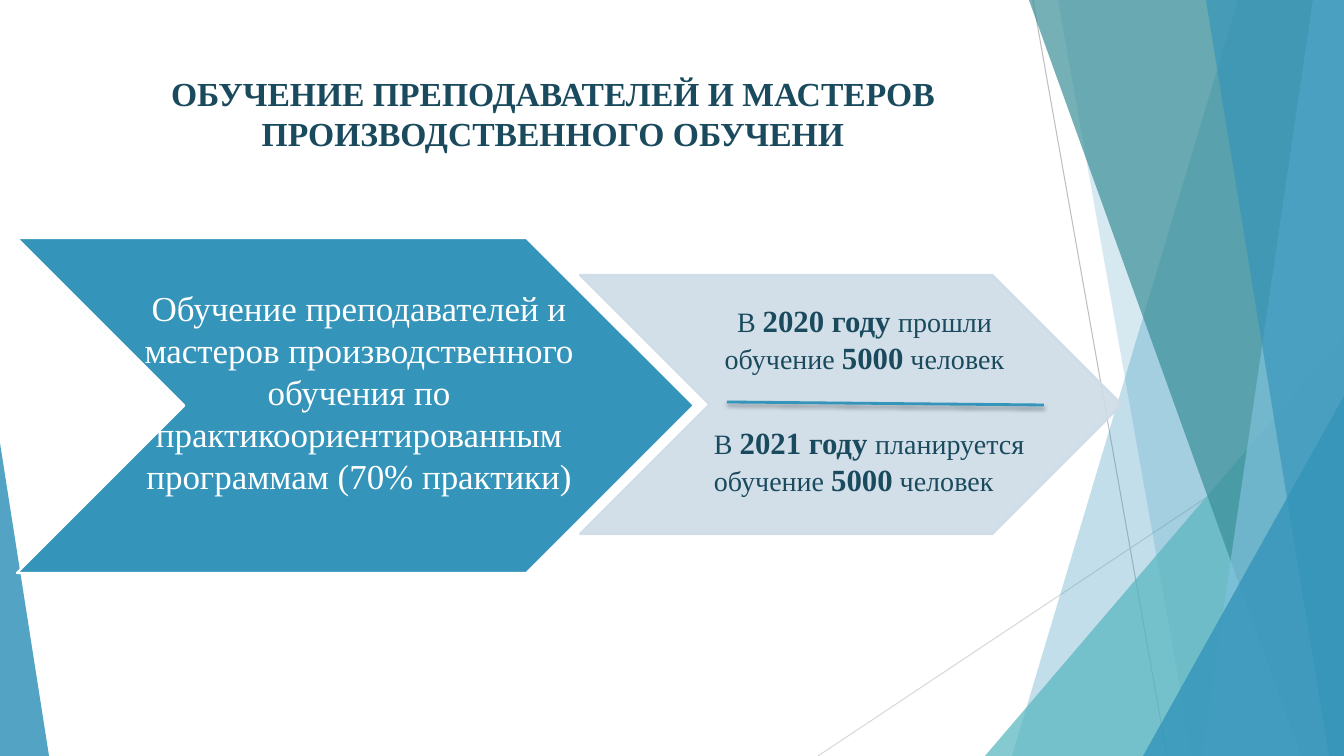
import pptx
import pptx.util
import pptx.oxml
import pptx.oxml.ns
from pptx.dml.color import RGBColor
from pptx.enum.shapes import MSO_CONNECTOR, MSO_SHAPE
from pptx.enum.text import MSO_ANCHOR, PP_ALIGN

PX = 914400 / 100.8
WIDE, HIGH = 1344, 756
FONT = "Times New Roman"
NS = 'xmlns:a="http://schemas.openxmlformats.org/drawingml/2006/main"'

BLUE = RGBColor(0x34, 0x94, 0xBA)
SKY = RGBColor(0x7F, 0xC1, 0xDB)
AQUA = RGBColor(0x58, 0xB6, 0xC0)
TEAL = RGBColor(0x3A, 0x8F, 0x98)
PALE = RGBColor(0xCE, 0xDC, 0xE7)
NAVY = RGBColor(0x1A, 0x4A, 0x5D)
WHITE = RGBColor(0xFF, 0xFF, 0xFF)
GRAY = RGBColor(0xBF, 0xBF, 0xBF)
MIST = RGBColor(0xD9, 0xD9, 0xD9)

# Content: each text is a list of paragraphs, each run is (words, size, bold)
TITLE = [[("ОБУЧЕНИЕ ПРЕПОДАВАТЕЛЕЙ И МАСТЕРОВ ПРОИЗВОДСТВЕННОГО ОБУЧЕНИ", 24, True)]]
GOAL = [[("Обучение преподавателей и мастеров производственного обучения по "
          "практикоориентированным программам (70% практики)", 25, False)]]
PAST = [[("В ", 20, False), ("2020 году ", 22, True), ("прошли обучение ", 20, False),
         ("5000", 22, True), (" человек", 20, False)]]
PLAN = [[("В ", 20, False), ("2021 году ", 22, True), ("планируется", 20, False)],
        [("обучение ", 20, False), ("5000", 22, True), (" человек", 20, False)]]

# Decor: hairlines, then facets from back to front
HAIRS = [((1033, 0), (1167, HIGH), GRAY), ((WIDE, 406), (818, HIGH), MIST)]
FACETS = [  # top left x, bottom left x, colour, opacity; a box is a triangle
    (1238, 1012, BLUE, 30),
    (1058, 1192, BLUE, 20),
    ((985, 336, 359, 420), 1, AQUA, 72),
    (1029, 1301, TEAL, 70),
    (1313, 1202, SKY, 70),
    (1206, 1329, BLUE, 65),
    ((1143, 396, 201, 360), 1, BLUE, 80),
    ((0, 443, 49, 313), 0, BLUE, 85),
]
CHEVRONS = [((17, 238, 677, 335), BLUE, 100, WHITE), ((580, 275, 542, 259), PALE, 90, PALE)]
LABELS = [  # box, text, colour, frame format, alignment
    ((121, 224, 476, 335), GOAL, WHITE,
     dict(word_wrap=True, vertical_anchor=MSO_ANCHOR.MIDDLE, margin_left=0, margin_right=0,
          margin_top=0, margin_bottom=0), PP_ALIGN.CENTER),
    ((681, 297, 367, 85), PAST, NAVY, dict(word_wrap=True), PP_ALIGN.CENTER),
    ((704, 419, 341, 85), PLAN, NAVY, dict(word_wrap=False), PP_ALIGN.LEFT),
]


def emu(*nums):
    return [round(n * PX) for n in nums]


def put(item, form):
    for name, value in form.items():
        setattr(item, name, value)


def fade(fill, part):
    tone = fill._xPr.find(".//" + pptx.oxml.ns.qn("a:srgbClr"))
    tone.append(pptx.oxml.parse_xml(f'<a:alpha {NS} val="{part * 1000}"/>'))


def paint(shape, tint, part, edge=None):
    shape.shadow.inherit = False
    shape.fill.solid()
    shape.fill.fore_color.rgb = tint
    if part < 100:
        fade(shape.fill, part)
    if edge is None:
        shape.line.fill.background()
        return
    shape.line.color.rgb = edge
    shape.line.width = pptx.util.Pt(1.5)
    if part < 100:
        fade(shape.line.fill, part)


def rule(start, end, tint, width, glow=""):
    line = slide.shapes.add_connector(MSO_CONNECTOR.STRAIGHT, *emu(*start, *end))
    line.line.color.rgb = tint
    line.line.width = pptx.util.Pt(width)
    line._element.spPr.append(pptx.oxml.parse_xml(f"<a:effectLst {NS}>{glow}</a:effectLst>"))


def write(frame, text, tint, form, align):
    put(frame, form)
    for i, runs in enumerate(text):
        para = frame.paragraphs[0] if i == 0 else frame.add_paragraph()
        para.alignment = align
        for words, size, bold in runs:
            run = para.add_run()
            run.text = words
            put(run.font, dict(name=FONT, size=pptx.util.Pt(size), bold=bold))
            run.font.color.rgb = tint


deck = pptx.Presentation()
deck.slide_width, deck.slide_height = emu(WIDE, HIGH)
slide = deck.slides.add_slide(deck.slide_layouts[5])

# Side decor
for start, end, tint in HAIRS:
    rule(start, end, tint, 0.75)
for top, foot, tint, part in FACETS:
    if isinstance(top, tuple):
        facet = slide.shapes.add_shape(MSO_SHAPE.ISOSCELES_TRIANGLE, *emu(*top))
        facet.adjustments[0] = foot
    else:
        form = slide.shapes.build_freeform(top, 0, scale=PX)
        form.add_line_segments([(WIDE, 0), (WIDE, HIGH), (foot, HIGH)], close=True)
        facet = form.convert_to_shape()
    paint(facet, tint, part)

# Title
title = slide.shapes.title
put(title, dict(zip(("left", "top", "width", "height"), emu(154, 68, 798, 92))))
write(title.text_frame, TITLE, NAVY,
      dict(word_wrap=True, vertical_anchor=MSO_ANCHOR.TOP), PP_ALIGN.CENTER)

# Chevrons and their texts
for box, tint, part, edge in CHEVRONS:
    paint(slide.shapes.add_shape(MSO_SHAPE.CHEVRON, *emu(*box)), tint, part, edge)
for box, text, tint, form, align in LABELS:
    write(slide.shapes.add_textbox(*emu(*box)).text_frame, text, tint, form, align)

# Divider with a soft shadow
rule((727, 402), (1044, 405), BLUE, 2,
     '<a:outerShdw blurRad="38100" dist="25400" dir="5400000" rotWithShape="0">'
     '<a:srgbClr val="000000"><a:alpha val="35000"/></a:srgbClr></a:outerShdw>')

deck.save("out.pptx")
